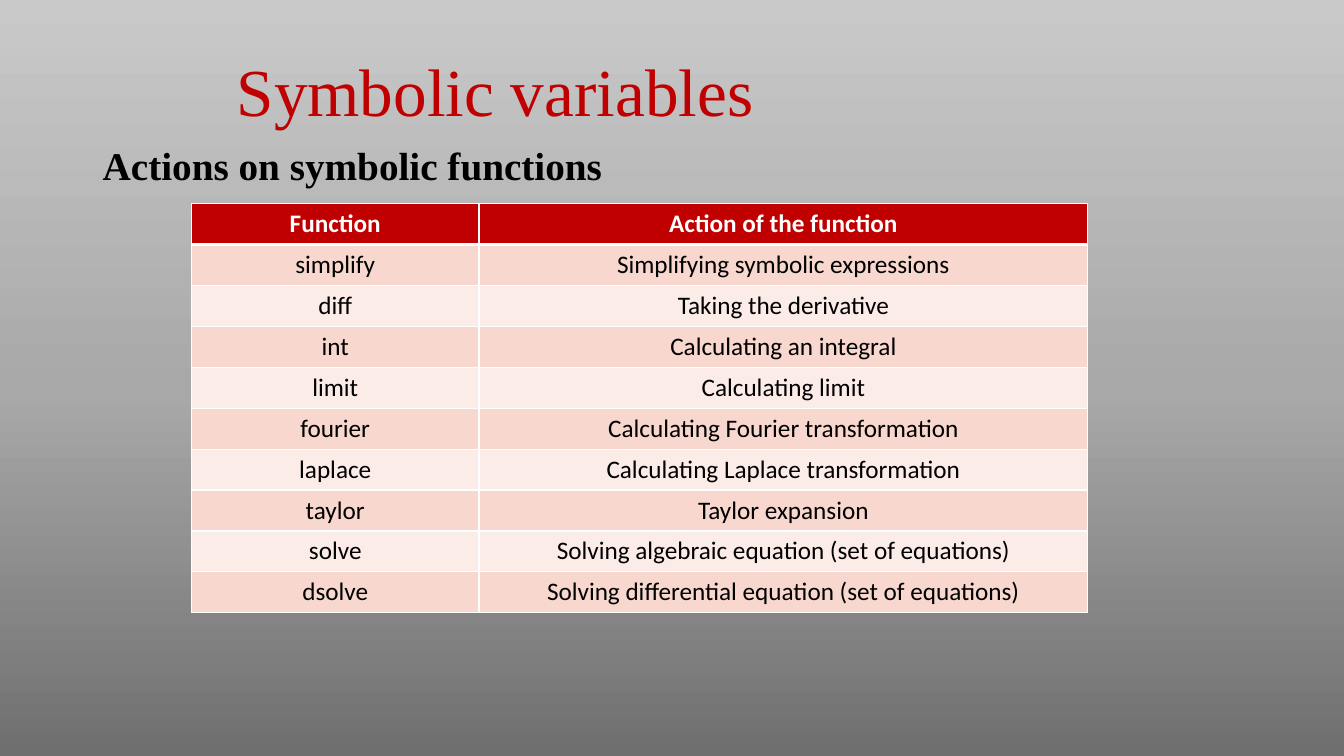
from lxml import etree
from pptx import Presentation
from pptx.dml.color import RGBColor
from pptx.enum import text
from pptx.oxml.ns import qn
from pptx.util import Inches, Pt

# Content
TITLE = "Symbolic variables"
SUBTITLE = "Actions on symbolic functions"
HEADER = ("Function", "Action of the function")
FUNCTIONS = [
    ("simplify", "Simplifying symbolic expressions"),
    ("diff", "Taking the derivative"),
    ("int", "Calculating an integral"),
    ("limit", "Calculating limit"),
    ("fourier", "Calculating Fourier transformation"),
    ("laplace", "Calculating Laplace transformation"),
    ("taylor", "Taylor expansion"),
    ("solve", "Solving algebraic equation (set of equations)"),
    ("dsolve", "Solving differential equation (set of equations)"),
]
COLORS = {"red": "C00000", "black": "000000", "white": "FFFFFF",
          "dark band": "F8D7CE", "light band": "FCECE8"}
BACKDROP = [(0, "6F6F6F"), (48, "A8A8A8"), (100, "C9C9C9")]
COLUMN_WIDTHS = (2.85, 6.04)
TABLE_HEIGHT = 4.06


def style(paragraph, font_name, size, color, bold=False):
    font = paragraph.font
    font.name, font.size, font.bold = font_name, Pt(size), bold
    font.color.rgb = RGBColor.from_string(COLORS[color])


def add_heading(slide, wording, box, size, color, bold=False):
    frame = slide.shapes.add_textbox(*map(Inches, box)).text_frame
    frame.word_wrap = True
    frame.auto_size = text.MSO_AUTO_SIZE.SHAPE_TO_FIT_TEXT
    frame.text = wording
    style(frame.paragraphs[0], "Times New Roman", size, color, bold)


def add_border(cell, side, points):
    line = etree.SubElement(cell._tc.get_or_add_tcPr(), qn("a:ln" + side), w=str(Pt(points)))
    fill = etree.SubElement(line, qn("a:solidFill"))
    etree.SubElement(fill, qn("a:srgbClr"), val=COLORS["white"])


prs = Presentation()
prs.slide_width, prs.slide_height = Inches(13.33), Inches(7.5)
slide = prs.slides.add_slide(prs.slide_layouts[6])

# Background gradient, dark at the bottom
backdrop = slide.background.fill
backdrop.gradient()
backdrop.gradient_angle = 90
stops = slide._element.find(".//" + qn("a:gsLst"))
for stop in list(stops):
    stops.remove(stop)
for percent, color in BACKDROP:
    stop = etree.SubElement(stops, qn("a:gs"), pos=str(percent * 1000))
    etree.SubElement(stop, qn("a:srgbClr"), val=color)

# Headings
add_heading(slide, TITLE, (2.25, 0.44, 9.67, 0.91), 48, "red")
add_heading(slide, SUBTITLE, (0.92, 1.35, 11.32, 0.57), 28, "black", bold=True)

# Table of functions
rows = [HEADER] + FUNCTIONS
table = slide.shapes.add_table(
    len(rows), len(HEADER), Inches(1.9), Inches(2.02),
    Inches(sum(COLUMN_WIDTHS)), Inches(TABLE_HEIGHT)).table
for column, width in zip(table.columns, COLUMN_WIDTHS):
    column.width = Inches(width)

for r, row in enumerate(rows):
    is_header = r == 0
    band = "red" if is_header else "dark band" if r % 2 else "light band"
    for c, wording in enumerate(row):
        cell = table.cell(r, c)
        cell.text = wording
        paragraph = cell.text_frame.paragraphs[0]
        paragraph.alignment = text.PP_ALIGN.CENTER
        style(paragraph, "Calibri", 18, "white" if is_header else "black", is_header)
        # Thick rule between the header and the first function
        for side, is_thick in (("L", False), ("R", False), ("T", r == 1), ("B", is_header)):
            add_border(cell, side, 3 if is_thick else 1)
        cell.fill.solid()
        cell.fill.fore_color.rgb = RGBColor.from_string(COLORS[band])

prs.save("out.pptx")
